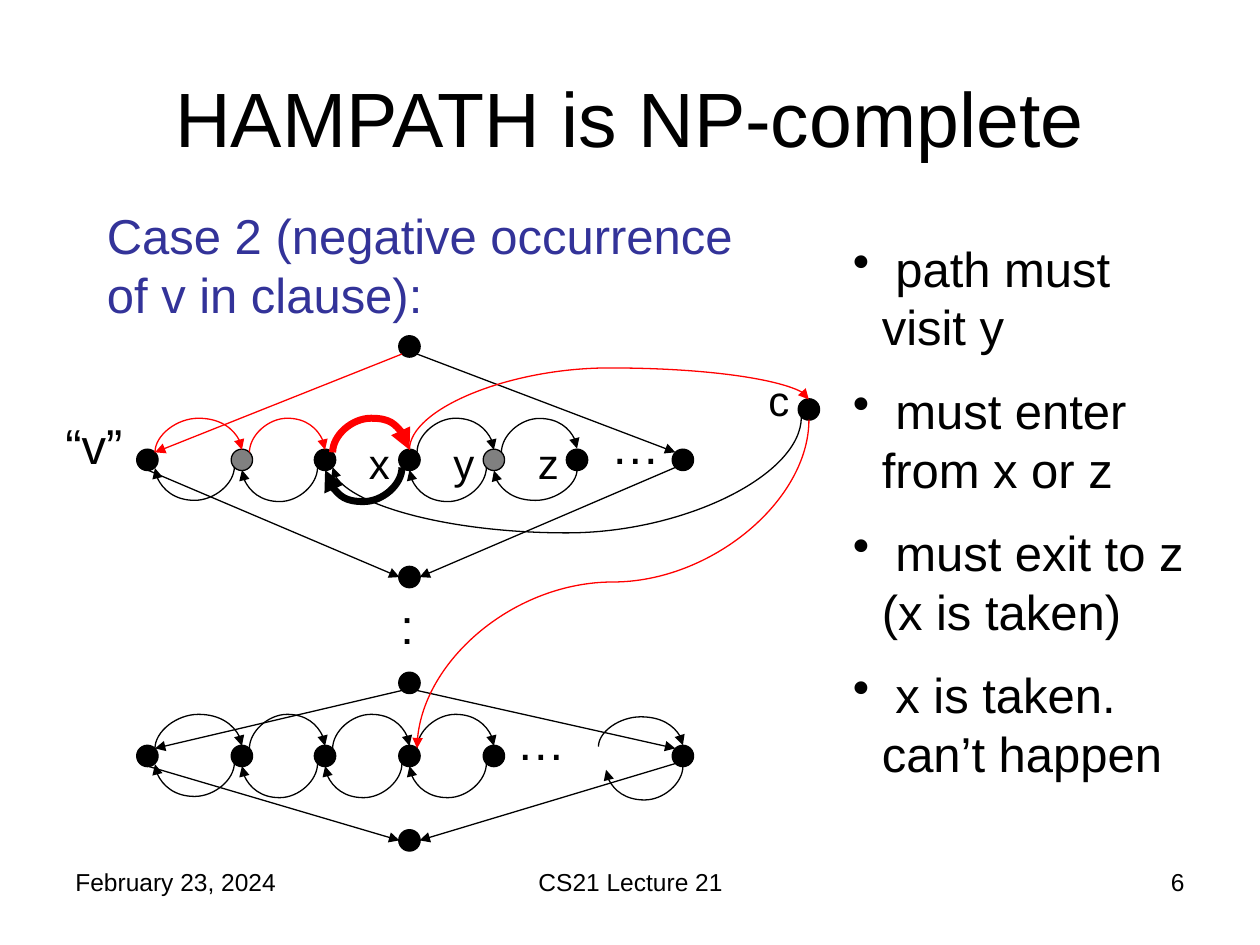
from lxml.etree import SubElement
from pptx import Presentation
from pptx.dml.color import RGBColor
from pptx.enum.shapes import MSO_CONNECTOR as CONN, MSO_SHAPE as SHAPE
from pptx.enum.text import MSO_ANCHOR as ANCHOR, PP_ALIGN as ALIGN
from pptx.oxml.ns import qn
from pptx.util import Inches, Pt

BLACK, RED, GRAY, BLUE = "000000", "FF0000", "808080", "333399"
D = 0.17                # node diameter
R, EDGE = 0.08, 0.06    # offsets to a node's side and to its diagonal
NODE_XS = [1.17, 1.92, 2.58, 3.25, 3.92]
MID_X, LAST_X = 3.25, 5.42


def rgb(color):
    return RGBColor.from_string(color)


def add_text(slide, box, lines, size, color=BLACK, align=ALIGN.LEFT,
             anchor=ANCHOR.TOP, bullet=False):
    tf = slide.shapes.add_textbox(*map(Inches, box)).text_frame
    tf.word_wrap = True
    tf.vertical_anchor = anchor
    for i, line in enumerate(lines):
        p = tf.paragraphs[0] if i == 0 else tf.add_paragraph()
        p.alignment = align
        if i:
            p.space_before = Pt(size / 2)
        if bullet:
            pPr = p._p.get_or_add_pPr()
            pPr.set("marL", str(Inches(0.23)))
            pPr.set("indent", str(Inches(-0.23)))
            SubElement(pPr, qn("a:buChar"), char="•")
        r = p.add_run()
        r.text = line
        for name, value in {"name": "Arial", "size": Pt(size)}.items():
            setattr(r.font, name, value)
        r.font.color.rgb = rgb(color)


def add_node(slide, x, y, fill=BLACK):
    sp = slide.shapes.add_shape(SHAPE.OVAL, Inches(x - D / 2), Inches(y - D / 2),
                                Inches(D), Inches(D))
    sp.shadow.inherit = False
    sp.fill.solid()
    sp.fill.fore_color.rgb = rgb(fill)
    sp.line.color.rgb = rgb(BLACK)
    sp.line.width = Pt(0.75)


def add_arrow(slide, kind, start, end, color, width):
    sp = slide.shapes.add_connector(kind, *map(Inches, (*start, *end)))
    sp.line.color.rgb = rgb(color)
    sp.line.width = Pt(width)
    SubElement(sp.line._get_or_add_ln(), qn("a:tailEnd"), type="triangle")
    SubElement(sp.element.spPr, qn("a:effectLst"))
    return sp


def add_line(slide, start, end, color=BLACK):
    add_arrow(slide, CONN.STRAIGHT, start, end, color, 0.75)


def add_curve(slide, start, end, bend=0.27, color=BLACK, width=0.75):
    """Curve that bends over the nodes going right, under them going left."""
    (x1, y1), (x2, y2) = start, end
    w, h = max(abs(y2 - y1), 0.01), abs(x2 - x1)
    # The box is laid out unrotated about the centre of the curve
    left, top = (x1 + x2 - w) / 2, (y1 + y2 - h) / 2
    sp = add_arrow(slide, CONN.CURVE, (left, top), (left + w, top + h), color, width)
    spPr = sp.element.spPr
    spPr.find(qn("a:xfrm")).set("rot", str((270 if x2 > x1 else 90) * 60000))
    geom = spPr.find(qn("a:prstGeom"))
    av = geom.find(qn("a:avLst"))
    if av is None:
        av = SubElement(geom, qn("a:avLst"))
    SubElement(av, qn("a:gd"), name="adj1", fmla=f"val {round(bend / w * 100000)}")


def add_diamond(slide, top, y, bottom, fills, over, under, left_color=BLACK):
    """Variable gadget; over and under give (color, width) for each arc."""
    for x, fill in zip(NODE_XS, fills):
        add_node(slide, x, y, fill)
    for x, cy in ((LAST_X, y), (MID_X, top), (MID_X, bottom)):
        add_node(slide, x, cy)

    # Sides of the diamond
    first, last = NODE_XS[0], LAST_X - EDGE
    add_line(slide, (MID_X - EDGE, top + EDGE), (first + EDGE, y - EDGE), left_color)
    add_line(slide, (MID_X + EDGE, top + EDGE), (last, y - EDGE))
    add_line(slide, (first, y + R), (MID_X - R, bottom))
    add_line(slide, (last, y + EDGE), (MID_X + R, bottom))

    # Arcs between neighbouring nodes
    for i, (x, nxt) in enumerate(zip(NODE_XS, NODE_XS[1:])):
        back = (x + EDGE, y + EDGE) if i == 0 else (x, y + R)
        add_curve(slide, (x + EDGE, y - EDGE), (nxt, y - R), 0.27, *over[i])
        add_curve(slide, (nxt - EDGE, y + EDGE), back, 0.27, *under[i])


def main():
    prs = Presentation()
    prs.slide_width, prs.slide_height = Inches(10), Inches(7.5)
    slide = prs.slides.add_slide(prs.slide_layouts[6])

    # Title and footer
    add_text(slide, (0.5, 0.3, 9, 1.25), ["HAMPATH is NP-complete"], 44,
             align=ALIGN.CENTER, anchor=ANCHOR.MIDDLE)
    for left, width, text, align in (
            (0.5, 2.33, "February 23, 2024", ALIGN.LEFT),
            (3.42, 3.17, "CS21 Lecture 21", ALIGN.CENTER),
            (7.17, 2.33, "6", ALIGN.RIGHT)):
        add_text(slide, (left, 6.83, width, 0.52), [text], 14, align=align)

    # Gadget for v and the gadget of a later variable
    thin, red = (BLACK, 0.75), (RED, 0.75)
    add_diamond(slide, 2.75, 3.65, 4.58, [BLACK, GRAY, BLACK, BLACK, GRAY],
                [red, red, (RED, 4), thin], [thin, thin, (BLACK, 4), thin], RED)
    add_diamond(slide, 5.42, 6, 6.67, [BLACK] * 5, [thin] * 4, [thin] * 4)

    # Node z, and the arcs at the right end of the lower gadget
    add_node(slide, 4.58, 3.65)
    add_curve(slide, (3.98, 3.59), (4.58, 3.56))
    add_curve(slide, (4.58, 3.73), (3.92, 3.73), 0.25)
    add_curve(slide, (4.75, 5.92), (5.42, 5.92), 0.24)
    add_curve(slide, (5.42, 6.08), (4.81, 6.11))

    # Clause node and its detours
    add_node(slide, 6.42, 3.25)
    add_curve(slide, (3.25, 3.57), (6.42, 3.17), 0.65, RED)
    add_curve(slide, (6.42, 3.33), (3.31, 5.94), 1.29, RED)
    add_curve(slide, (6.36, 3.31), (2.64, 3.71), 0.92)

    # Labels
    for left, top, width, text in ((4.75, 3.25, 0.75, "…"), (4, 5.6, 0.75, "…"),
                                   (3.08, 4.68, 0.42, ":"), (0.42, 3.25, 0.75, "“v”")):
        add_text(slide, (left, top, width, 0.57), [text], 28)
    for left, top, text in ((6, 2.92, "c"), (2.83, 3.42, "x"),
                            (3.5, 3.42, "y"), (4.17, 3.42, "z")):
        add_text(slide, (left, top, 0.33, 0.5), [text], 24)

    # Case statement and argument
    add_text(slide, (0.75, 1.58, 5.25, 1.03),
             ["Case 2 (negative occurrence of v in clause):"], 28, BLUE)
    add_text(slide, (6.67, 1.84, 2.92, 4.54),
             [" path must visit y", " must enter from x or z",
              " must exit to z (x is taken)", " x is taken. can’t happen"],
             28, bullet=True)

    prs.save("out.pptx")


if __name__ == "__main__":
    main()
